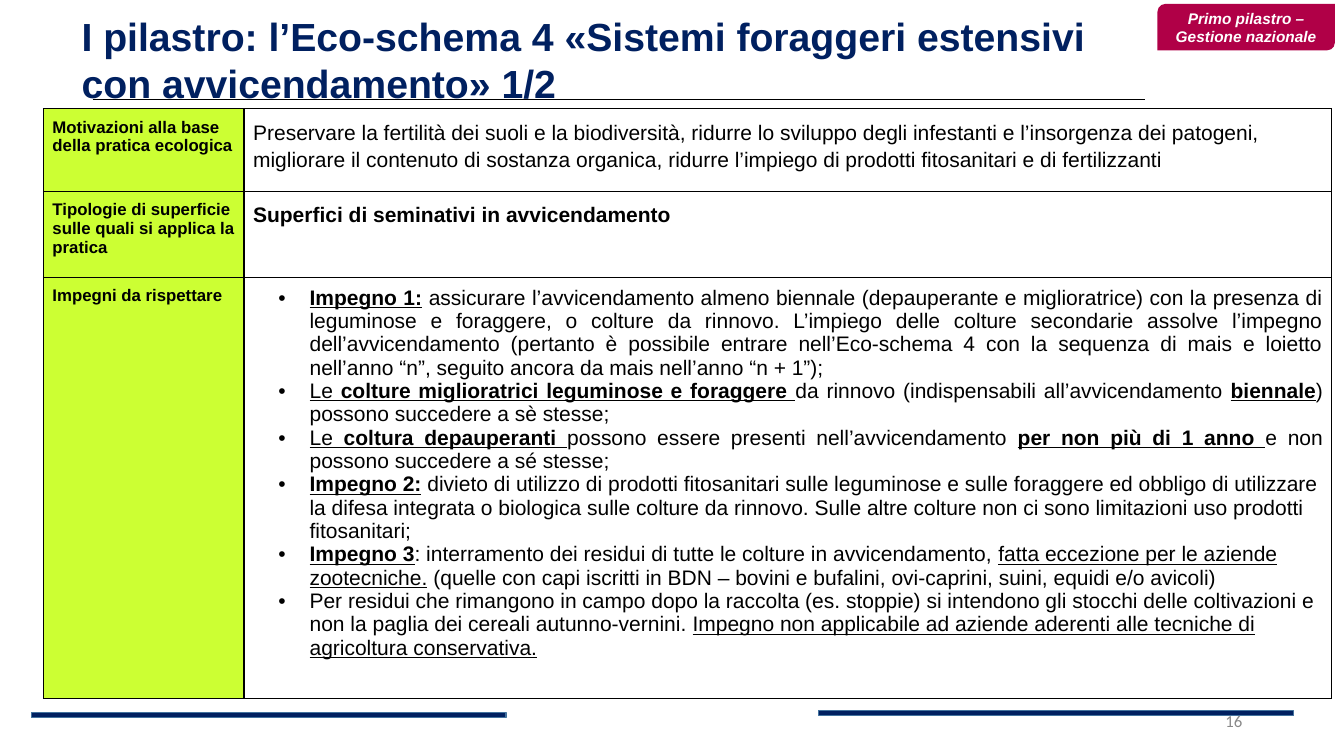
from lxml import etree
from pptx import Presentation
from pptx import util as u
from pptx.dml import color
from pptx.enum import shapes, text
from pptx.oxml import ns

NAVY, LIME, BLACK, WHITE = "002060", "CCFF33", "000000", "FFFFFF"

presentation = Presentation()
presentation.slide_width = u.Inches(13.33)
presentation.slide_height = u.Inches(7.5)
slide = presentation.slides.add_slide(presentation.slide_layouts[6])


def rgb(code):
    return color.RGBColor.from_string(code)


def share(*percents):
    sides = (presentation.slide_width, presentation.slide_height)
    return [round(sides[i % 2] * percent / 100) for i, percent in enumerate(percents)]


number = slide.shapes.add_textbox(*share(70.67, 92.67, 22.5, 5.33))
number.text_frame.word_wrap = True
number.text_frame.vertical_anchor = text.MSO_ANCHOR.MIDDLE
paragraph = number.text_frame.paragraphs[0]
paragraph.text = "16"
paragraph.alignment = text.PP_ALIGN.RIGHT
paragraph.font.name = "Calibri"
paragraph.font.size = u.Pt(12)
paragraph.font.color.rgb = rgb("898989")

for left, top in ((60.92, 94), (2.33, 94.27)):
    bar = slide.shapes.add_shape(shapes.MSO_SHAPE.RECTANGLE, *share(left, top, 35.33, 0.67))
    bar.shadow.inherit = False
    bar.fill.solid()
    bar.fill.fore_color.rgb = rgb(NAVY)
    bar.line.color.rgb = rgb("43739E")
    bar.line.width = u.Pt(1)

rule = slide.shapes.add_connector(shapes.MSO_CONNECTOR.STRAIGHT, *share(6.9, 13.2, 85.22, 13.2))
rule.line.color.rgb = rgb(BLACK)
rule.line.width = u.Pt(0.5)
etree.SubElement(rule._element.spPr, ns.qn("a:effectLst"))

title = slide.shapes.add_textbox(*share(5.33, 0.27, 77.2, 15.2))
frame = title.text_frame
frame.word_wrap = True
frame.margin_top = frame.margin_bottom = u.Inches(0.1)
paragraph = frame.paragraphs[0]
paragraph.text = "I pilastro: l’Eco-schema 4 «Sistemi foraggeri estensivi con avvicendamento» 1/2"
paragraph.font.name = "Arial"
paragraph.font.size = u.Pt(28)
paragraph.font.bold = True
paragraph.font.color.rgb = rgb(NAVY)

labels = [
    "Motivazioni alla base della pratica ecologica",
    "Tipologie di superficie sulle quali si applica la pratica",
    "Impegni da rispettare",
]
commitments = [
    [("Impegno 1:", "bu"),
     (" assicurare l’avvicendamento almeno biennale (depauperante e miglioratrice) con la presenza di "
      "leguminose e foraggere, o colture da rinnovo. L’impiego delle colture secondarie assolve l’impegno "
      "dell’avvicendamento (pertanto è possibile entrare nell’Eco-schema 4 con la sequenza di mais e loietto "
      "nell’anno “n”, seguito ancora da mais nell’anno “n + 1”);", "")],
    [("Le ", "u"), ("colture miglioratrici leguminose e foraggere ", "bu"),
     ("da rinnovo (indispensabili all’avvicendamento ", ""), ("biennale", "bu"),
     (") possono succedere a sè stesse;", "")],
    [("Le ", "u"), ("coltura depauperanti ", "bu"),
     ("possono essere presenti nell’avvicendamento ", ""), ("per non più di 1 anno ", "bu"),
     ("e non possono succedere a sé stesse;", "")],
    [("Impegno 2:", "bu"),
     (" divieto di utilizzo di prodotti fitosanitari sulle leguminose e sulle foraggere ed obbligo di "
      "utilizzare la difesa integrata o biologica sulle colture da rinnovo. Sulle altre colture non ci sono "
      "limitazioni uso prodotti fitosanitari;", "")],
    [("Impegno 3", "bu"),
     (": interramento dei residui di tutte le colture in avvicendamento, ", ""),
     ("fatta eccezione per le aziende zootecniche.", "u"),
     (" (quelle con capi iscritti in BDN – bovini e bufalini, ovi-caprini, suini, equidi e/o avicoli)", "")],
    [("Per residui che rimangono in campo dopo la raccolta (es. stoppie) si intendono gli stocchi delle "
      "coltivazioni e non la paglia dei cereali autunno-vernini. ", ""),
     ("Impegno non applicabile ad aziende aderenti alle tecniche di agricoltura conservativa.", "u")],
]
contents = [
    [[("Preservare la fertilità dei suoli e la biodiversità, ridurre lo sviluppo degli infestanti e "
       "l’insorgenza dei patogeni, migliorare il contenuto di sostanza organica, ridurre l’impiego di "
       "prodotti fitosanitari e di fertilizzanti", "")]],
    [[("Superfici di seminativi in avvicendamento", "b")]],
    commitments,
]

table = slide.shapes.add_table(3, 2, *share(3.23, 14.4, 95.87, 78)).table
table.first_row = table.horz_banding = False
for column, width in zip(table.columns, (14.93, 80.94)):
    column.width = share(width)[0]
for row, height in zip(table.rows, (10.93, 11.33, 55.74)):
    row.height = share(0, height)[1]

for row, (label, content) in enumerate(zip(labels, contents)):
    columns = (([[(label, "b")]], LIME, 12), (content, WHITE, 15))
    for column, (paragraphs, fill, size) in enumerate(columns):
        cell = table.cell(row, column)
        cell.margin_left = cell.margin_right = u.Inches(0.09)
        cell.margin_top = cell.margin_bottom = u.Inches(0.09)
        properties = cell._tc.get_or_add_tcPr()
        for side in ("lnL", "lnR", "lnT", "lnB"):
            border = etree.SubElement(properties, ns.qn("a:" + side), w=str(u.Pt(1)))
            solid = etree.SubElement(border, ns.qn("a:solidFill"))
            etree.SubElement(solid, ns.qn("a:srgbClr"), val=BLACK)
        cell.fill.solid()
        cell.fill.fore_color.rgb = rgb(fill)
        for i, runs in enumerate(paragraphs):
            frame = cell.text_frame
            paragraph = frame.add_paragraph() if i else frame.paragraphs[0]
            if content is commitments and column:
                bullet = paragraph._p.get_or_add_pPr()
                bullet.set("marL", str(u.Inches(0.56)))
                bullet.set("indent", str(u.Inches(-0.31)))
                tint = etree.SubElement(bullet, ns.qn("a:buClr"))
                etree.SubElement(tint, ns.qn("a:srgbClr"), val=BLACK)
                etree.SubElement(bullet, ns.qn("a:buFont"), typeface="Arial")
                etree.SubElement(bullet, ns.qn("a:buChar"), char="•")
                paragraph.alignment = text.PP_ALIGN.JUSTIFY if i < 3 else text.PP_ALIGN.LEFT
            elif column:
                paragraph.line_spacing = 1.15
            paragraph.font.name = "Arial"
            paragraph.font.size = u.Pt(size)
            paragraph.font.color.rgb = rgb(BLACK)
            for words, style in runs:
                run = paragraph.add_run()
                run.text = words
                run.font.bold = "b" in style
                run.font.underline = "u" in style

badge = slide.shapes.add_shape(
    shapes.MSO_SHAPE.ROUND_2_DIAG_RECTANGLE, *share(86.12, 0.53, 13.2, 6.13))
badge.shadow.inherit = False
badge.fill.solid()
badge.fill.fore_color.rgb = rgb("B00047")
badge.line.fill.background()
badge.text_frame.word_wrap = True
badge.text_frame.vertical_anchor = text.MSO_ANCHOR.MIDDLE
paragraph = badge.text_frame.paragraphs[0]
paragraph.text = "Primo pilastro – Gestione nazionale"
paragraph.alignment = text.PP_ALIGN.CENTER
paragraph.font.name = "Arial"
paragraph.font.size = u.Pt(11)
paragraph.font.bold = paragraph.font.italic = True
paragraph.font.color.rgb = rgb(WHITE)

presentation.save("out.pptx")
